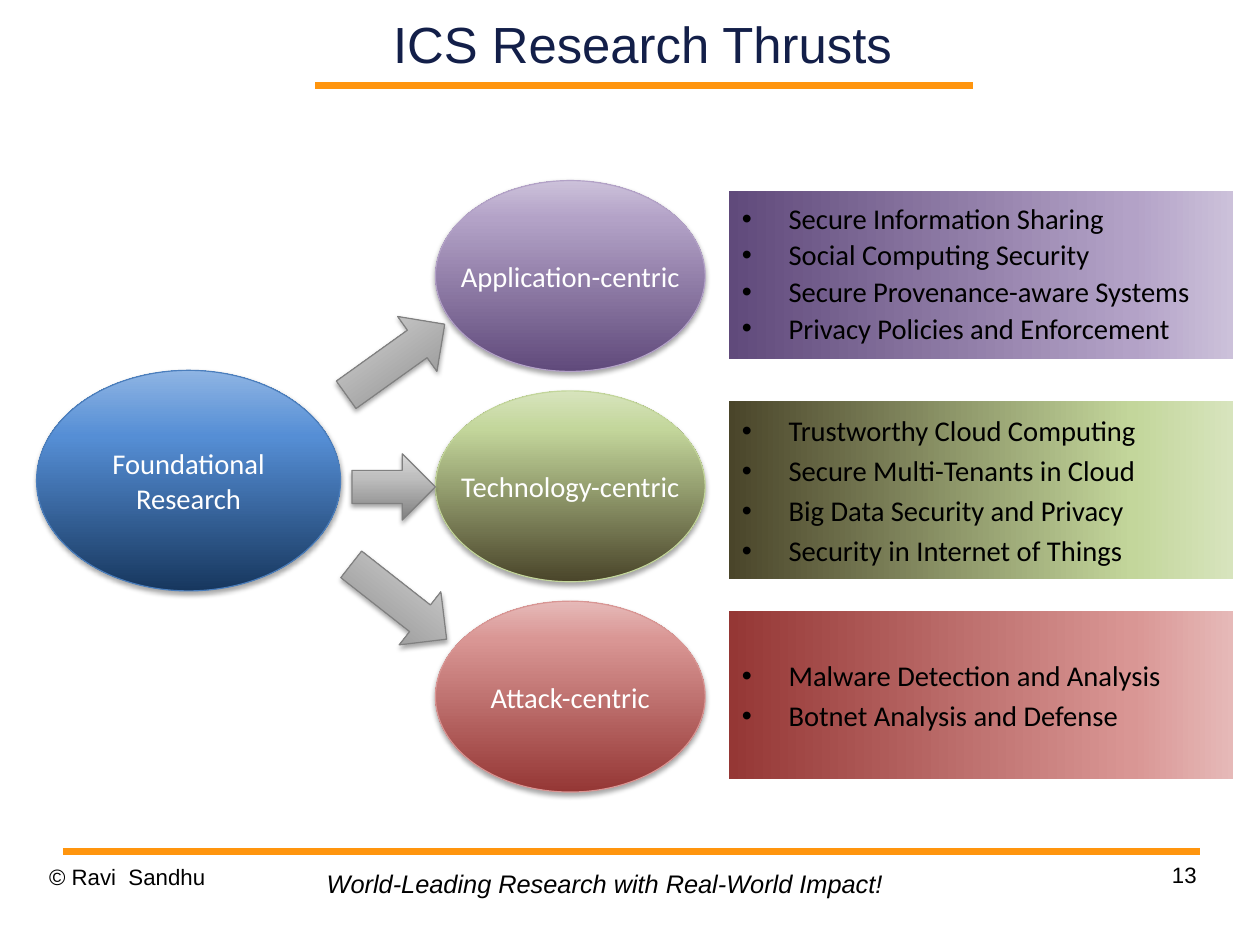
"""Builds the research thrusts slide: one foundation leading to three themes."""
from dataclasses import dataclass

from lxml import etree
from pptx import Presentation
from pptx import util as u
from pptx.dml.color import RGBColor
from pptx.enum import shapes, text
from pptx.oxml.ns import qn


@dataclass(frozen=True)
class Theme:
    """Colours, fonts and type sizes of the slide."""
    title: str = "131F49"
    ink: str = "000000"
    light: str = "FFFFFF"
    rule: str = "FF950E"
    foundation_line: str = "4B7EBC"
    arrow_line: str = "808080"
    foundation: tuple = ((0, "17375E"), (70, "558ED5"), (100, "8EB4E3"))
    application: tuple = ((0, "604A7B"), (80, "B3A2C7"), (100, "CCC1DA"))
    technology: tuple = ((0, "4A452A"), (80, "C3D69B"), (100, "D7E4BD"))
    attack: tuple = ((0, "953735"), (80, "D99694"), (100, "E6B9B8"))
    arrow: tuple = ((0, "808080"), (65, "BFBFBF"), (100, "D9D9D9"))
    heading_font: str = "Arial"
    body_font: str = "Calibri"
    title_size: int = 32
    body_size: int = 18
    slogan_size: int = 16
    footer_size: int = 14


THEME = Theme()
CM_PER_INCH = 2.54
ROW_STEP = 1.84
THRUSTS = (
    ("Application-centric", THEME.application, 1.47, 0.9, (
        "Secure Information Sharing", "Social Computing Security",
        "Secure Provenance-aware Systems", "Privacy Policies and Enforcement")),
    ("Technology-centric", THEME.technology, 1.56, 1.0, (
        "Trustworthy Cloud Computing", "Secure Multi-Tenants in Cloud",
        "Big Data Security and Privacy", "Security in Internet of Things")),
    ("Attack-centric", THEME.attack, 1.47, 1.0, (
        "Malware Detection and Analysis", "Botnet Analysis and Defense")),
)
ARROWS = (
    (2.93, 2.85, 1.06, 0.59, 324.4),
    (2.96, 4.97, 1.06, 0.59, 38.1),
    (3.08, 3.97, 0.73, 0.58, 0),
)


def inches(*lengths):
    """Turn numbers into lengths in inches."""
    return [u.Inches(length) for length in lengths]


def set_frame(frame, across, down, wrap=True, anchor=text.MSO_ANCHOR.MIDDLE):
    """Set the margins, wrapping and anchor of a text frame."""
    frame.margin_left = frame.margin_right = u.Inches(across)
    frame.margin_top = frame.margin_bottom = u.Inches(down)
    frame.word_wrap = wrap
    frame.vertical_anchor = anchor


def write(frame, lines, size, color, font, align=text.PP_ALIGN.LEFT, italic=False):
    """Write one paragraph per line and return the paragraphs."""
    for index, line in enumerate(lines):
        para = frame.add_paragraph() if index else frame.paragraphs[0]
        para.alignment = align
        span = para.add_run()
        span.text = line
        span.font.size = u.Pt(size)
        span.font.name = font
        span.font.italic = italic
        span.font.color.rgb = RGBColor.from_string(color)
    return frame.paragraphs


def add_label(page, place, line, size, color=THEME.ink, align=text.PP_ALIGN.LEFT,
              anchor=text.MSO_ANCHOR.TOP):
    """Add a one-line text box without margins."""
    frame = page.shapes.add_textbox(*inches(*place)).text_frame
    set_frame(frame, 0, 0, anchor=anchor)
    return write(frame, [line], size, color, THEME.heading_font, align)[0]


def add_slogan(page, line):
    """Add the italic slogan in the footer."""
    frame = page.shapes.add_textbox(*inches(2.76, 7.55, 5.08, 0.37)).text_frame
    set_frame(frame, 0.1, 0.05, wrap=False, anchor=text.MSO_ANCHOR.TOP)
    write(frame, [line], THEME.slogan_size, THEME.ink, THEME.heading_font, italic=True)


def add_rule(page, left, right, top):
    """Add a horizontal orange rule."""
    rule = page.shapes.add_connector(
        shapes.MSO_CONNECTOR.STRAIGHT, *inches(left, top, right, top))
    rule.line.color.rgb = RGBColor.from_string(THEME.rule)
    rule.line.width = u.Pt(4.31)
    etree.SubElement(rule._element.spPr, qn("a:effectLst"))


def add_gradient_shape(page, kind, place, stops, angle):
    """Add a preset shape with a gradient fill and no shadow."""
    shape = page.shapes.add_shape(kind, *inches(*place))
    shape.fill.gradient()
    shape.fill.gradient_angle = angle
    stop_list = shape._element.spPr.find(qn("a:gradFill")).find(qn("a:gsLst"))
    stop_list.clear()
    for position, color in stops:
        stop = etree.SubElement(stop_list, qn("a:gs"), pos=str(position * 1000))
        etree.SubElement(stop, qn("a:srgbClr"), val=color)
    shape.shadow.inherit = False
    return shape


def add_raised_shape(page, kind, place, stops, line_color):
    """Add an outlined gradient shape with a soft shadow below it."""
    shape = add_gradient_shape(page, kind, place, stops, 90)
    shape.line.color.rgb = RGBColor.from_string(line_color)
    shape.line.width = u.Pt(0.75)
    effects = shape._element.spPr.find(qn("a:effectLst"))
    shadow = etree.SubElement(
        effects, qn("a:outerShdw"), blurRad=str(u.Pt(3.1)), dist=str(u.Pt(1.8)),
        dir="5400000", rotWithShape="0")
    color = etree.SubElement(shadow, qn("a:srgbClr"), val=THEME.ink)
    etree.SubElement(color, qn("a:alpha"), val="35000")
    return shape


def add_ellipse(page, place, lines, stops, line_color):
    """Add an ellipse with centred white text."""
    ellipse = add_raised_shape(page, shapes.MSO_SHAPE.OVAL, place, stops, line_color)
    set_frame(ellipse.text_frame, 0, 0.06, wrap=False)
    write(ellipse.text_frame, lines, THEME.body_size, THEME.light, THEME.body_font,
          text.PP_ALIGN.CENTER)


def add_arrow(page, left, top, width, height, rotation):
    """Add a grey block arrow."""
    arrow = add_raised_shape(page, shapes.MSO_SHAPE.RIGHT_ARROW,
                             (left, top, width, height), THEME.arrow, THEME.arrow_line)
    arrow.rotation = rotation


def add_topics(page, place, topics, stops, spacing):
    """Add a panel with a bulleted list of topics."""
    panel = add_gradient_shape(page, shapes.MSO_SHAPE.RECTANGLE, place, stops, 0)
    panel.line.fill.background()
    set_frame(panel.text_frame, 0.11, 0.06)
    paras = write(panel.text_frame, topics, THEME.body_size, THEME.ink, THEME.body_font)
    for index, para in enumerate(paras):
        para.line_spacing = spacing
        if index:
            para.space_before = u.Pt(THEME.body_size * 0.2)
        properties = para._p.get_or_add_pPr()
        properties.set("marL", str(u.Inches(0.41)))
        properties.set("indent", str(u.Inches(-0.41)))
        etree.SubElement(properties, qn("a:buFont"), typeface=THEME.heading_font)
        etree.SubElement(properties, qn("a:buChar"), char="•")


def main():
    """Build the slide and save it."""
    deck = Presentation()
    deck.slide_width = u.Inches(28 / CM_PER_INCH)
    deck.slide_height = u.Inches(21 / CM_PER_INCH)
    page = deck.slides.add_slide(deck.slide_layouts[6])

    add_rule(page, 2.76, 8.51, 0.75)
    add_rule(page, 0.55, 10.5, 7.45)
    add_label(page, (2.41, 0, 6.43, 0.75), "ICS Research Thrusts", THEME.title_size,
              THEME.title, text.PP_ALIGN.CENTER, text.MSO_ANCHOR.MIDDLE)
    owner = add_label(page, (0.43, 7.55, 2.57, 0.57), "© Ravi  Sandhu", THEME.footer_size)
    number = add_label(page, (7.9, 7.53, 2.57, 0.57), "13", THEME.footer_size,
                       align=text.PP_ALIGN.RIGHT)
    owner.line_spacing = number.line_spacing = 1.01
    add_slogan(page, "World-Leading Research with Real-World Impact!")

    add_ellipse(page, (0.32, 3.24, 2.66, 1.93), ("Foundational", "Research"),
                THEME.foundation, THEME.foundation_line)
    for row, (name, stops, height, spacing, topics) in enumerate(THRUSTS):
        offset = row * ROW_STEP
        add_ellipse(page, (3.81, 1.58 + offset, 2.36, 1.67), [name], stops, stops[1][1])
        add_topics(page, (6.38, 1.67 + offset, 4.41, height), topics, stops, spacing)
    for arrow in ARROWS:
        add_arrow(page, *arrow)

    deck.save("out.pptx")


if __name__ == "__main__":
    main()
